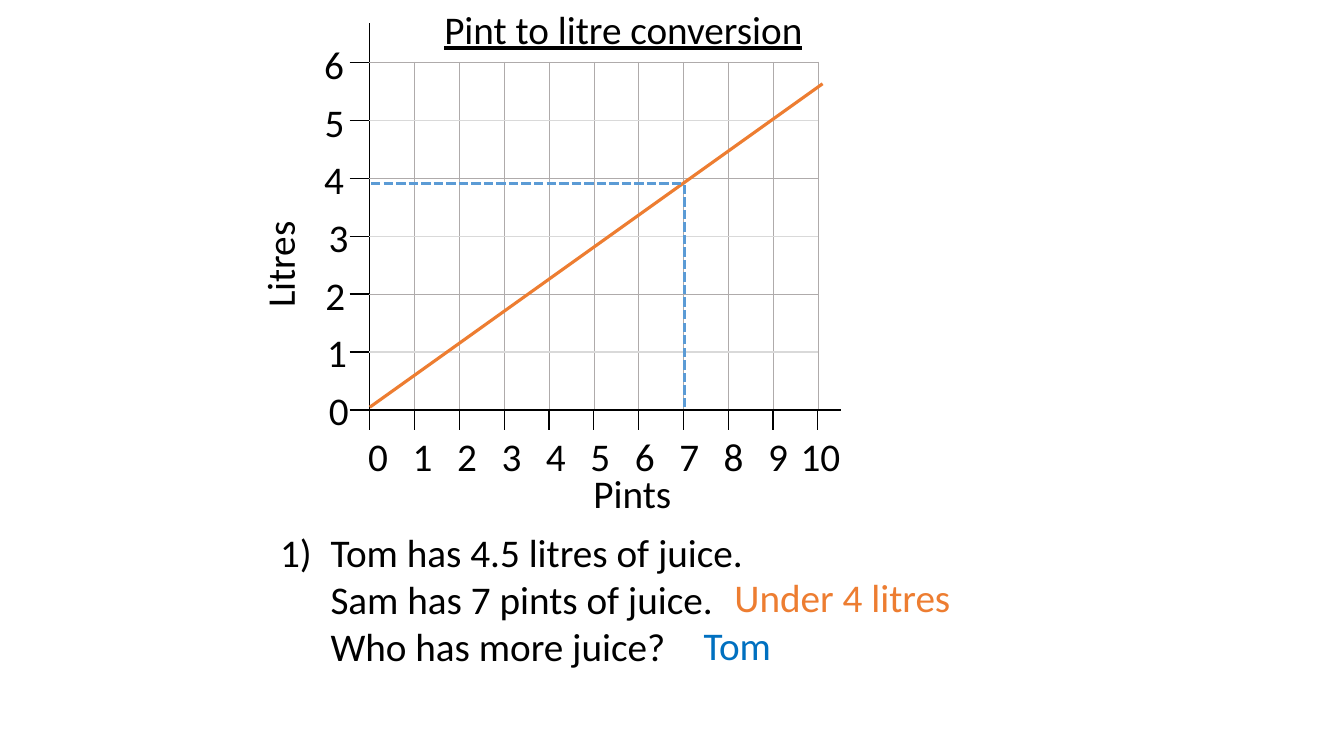
from lxml import etree
from pptx import Presentation
from pptx.dml.color import RGBColor
from pptx.enum.dml import MSO_LINE
from pptx.enum.shapes import MSO_CONNECTOR
from pptx.enum.text import MSO_AUTO_SIZE, PP_ALIGN
from pptx.oxml.ns import qn
from pptx.util import Cm, Pt

BLACK = RGBColor(0x00, 0x00, 0x00)
GREY = RGBColor(0xAF, 0xAB, 0xAB)
PALE_GREY = RGBColor(0xD9, 0xD9, 0xD9)
ORANGE = RGBColor(0xED, 0x7D, 0x31)
LIGHT_BLUE = RGBColor(0x5B, 0x9B, 0xD5)
BLUE = RGBColor(0x00, 0x70, 0xC0)

CENTER = PP_ALIGN.CENTER
LEFT = PP_ALIGN.LEFT
GROW = MSO_AUTO_SIZE.SHAPE_TO_FIT_TEXT
STRAIGHT = MSO_CONNECTOR.STRAIGHT
DASH = MSO_LINE.SQUARE_DOT

AXIS, MINOR, MAJOR = (BLACK, 1), (GREY, 0.5), (PALE_GREY, 1)
NO_GRID_STYLE = "{2D5ABB26-0587-4C30-8999-92F81FD0307C}"
PINTS, LITRES = 10, 6
LABEL_HEIGHT = 1.45
COLUMN_WIDTHS = [0.51] + [1.13] * PINTS + [0.59] * 2
ROW_HEIGHTS = [0.99] + [1.46] * LITRES + [0.51]
LITRE_LABEL_BOXES = [(-0.78, 1.02), (-0.86, 1.09), (-0.86, 0.94), (-0.78, 0.89),
                     (-0.96, 1.14), (-1.55, 2.34), (-1.62, 2.46)]


def add_label(slide, left, top, width, lines, height=LABEL_HEIGHT, color=BLACK,
              align=CENTER, hanging=0, **extra):
    """Write lines of text in a wrapped box and return the box."""
    box = slide.shapes.add_textbox(Cm(left), Cm(top), Cm(width), Cm(height))
    frame = box.text_frame
    frame.word_wrap = True
    frame.auto_size = GROW
    formats = {"name": "Calibri", "size": Pt(28), **extra}
    for index, line in enumerate(lines):
        paragraph = frame.paragraphs[0] if index == 0 else frame.add_paragraph()
        paragraph.alignment = align
        if hanging:
            properties = paragraph._p.get_or_add_pPr()
            properties.set("marL", str(Cm(hanging)))
            properties.set("indent", str(-Cm(hanging)))
        run = paragraph.add_run()
        run.text = line
        for attribute, value in formats.items():
            setattr(run.font, attribute, value)
        run.font.color.rgb = color
    return box


def add_line(slide, start, end, color, dash=None):
    """Draw a straight line between two points."""
    line = slide.shapes.add_connector(STRAIGHT, *map(Cm, (*start, *end)))
    line.line.color.rgb = color
    for attribute, value in {"width": Pt(2.25), "dash_style": dash}.items():
        setattr(line.line, attribute, value)
    etree.SubElement(line._element.spPr, qn("a:effectLst"))


def vertical_border(row, edge):
    """Return the border on a column edge, counted from the left."""
    if edge == 1 or (row == LITRES + 1 and 1 < edge <= PINTS + 1):
        return AXIS
    return MINOR if 1 <= row <= LITRES and 1 < edge <= PINTS + 1 else None


def horizontal_border(edge, column):
    """Return the border on a row edge, counted from the top."""
    if not 1 <= edge <= LITRES + 1:
        return None
    if column == 0 or (edge == LITRES + 1 and column <= PINTS + 1):
        return AXIS
    if column > PINTS:
        return None
    return MINOR if edge % 2 else MAJOR


def set_border(properties, side, border):
    """Add one cell border."""
    line = etree.SubElement(properties, qn(f"a:ln{side}"))
    if border is None:
        etree.SubElement(line, qn("a:noFill"))
        return
    color, width = border
    line.set("w", str(Pt(width)))
    fill = etree.SubElement(line, qn("a:solidFill"))
    etree.SubElement(fill, qn("a:srgbClr"), val=str(color))


def add_grid(slide, left, top):
    """Place the graph paper with its axes and tick marks."""
    size = Cm(sum(COLUMN_WIDTHS)), Cm(sum(ROW_HEIGHTS))
    grid = slide.shapes.add_table(len(ROW_HEIGHTS), len(COLUMN_WIDTHS),
                                  Cm(left), Cm(top), *size).table
    grid._tbl.tblPr.find(qn("a:tableStyleId")).text = NO_GRID_STYLE
    grid.first_row = grid.horz_banding = False
    for column, width in zip(grid.columns, COLUMN_WIDTHS):
        column.width = Cm(width)
    for r, (row, height) in enumerate(zip(grid.rows, ROW_HEIGHTS)):
        row.height = Cm(height)
        for c, cell in enumerate(row.cells):
            for side in ("left", "right", "top", "bottom"):
                setattr(cell, f"margin_{side}", 0)
            properties = cell._tc.get_or_add_tcPr()
            set_border(properties, "L", vertical_border(r, c))
            set_border(properties, "R", vertical_border(r, c + 1))
            set_border(properties, "T", horizontal_border(r, c))
            set_border(properties, "B", horizontal_border(r + 1, c))
            cell.fill.background()
            paragraph = cell.text_frame.paragraphs[0]._p
            etree.SubElement(paragraph, qn("a:endParaRPr"), sz="600")
    last = len(COLUMN_WIDTHS) - 1
    for r in range(1, LITRES, 2):
        grid.cell(r, last).merge(grid.cell(r + 1, last))


def add_graph(slide, left, top):
    """Place the conversion graph with its labels and lines."""
    add_grid(slide, left, top)
    for litres, (offset, width) in enumerate(LITRE_LABEL_BOXES):
        add_label(slide, left + offset, top + 9.02 - LABEL_HEIGHT * litres, width,
                  [str(litres)])
    for pints in range(PINTS):
        add_label(slide, left + 0.22 + 1.12 * pints, top + 10.19, 0.76, [str(pints)])
    add_label(slide, left + 11.08, top + 10.19, 1.57, [str(PINTS)])
    add_label(slide, left + 0.61, top + 11.13, 13.03, ["Pints"])
    add_label(slide, left - 6.96, top + 5.36, 10.39, ["Litres"]).rotation = 270
    add_label(slide, left + 0.51, top - 0.58, 12.78, ["Pint to litre conversion"],
              underline=True)

    reading_x, reading_y, base = left + 8.44, top + 4.04, top + 9.68
    add_line(slide, (left + 11.92, top + 1.53), (left + 0.51, base), ORANGE)
    add_line(slide, (left + 0.54, reading_y), (reading_x, reading_y), LIGHT_BLUE, DASH)
    add_line(slide, (reading_x, base), (reading_x, reading_y), LIGHT_BLUE, DASH)


def add_question(slide, left, top):
    """Place the question and its two answers."""
    question = ["1)\tTom has 4.5 litres of juice.", "\tSam has 7 pints of juice.",
                "\tWho has more juice?"]
    add_label(slide, left, top, 21.51, question, height=3.84, align=LEFT, hanging=1.27)
    add_label(slide, left + 11.45, top + 1.15, 6.35, ["Under 4 litres"],
              color=ORANGE, align=LEFT)
    add_label(slide, left + 10.67, top + 2.34, 6.35, ["Tom"], color=BLUE, align=LEFT)


def main():
    """Build and save the slide."""
    presentation = Presentation()
    presentation.slide_width, presentation.slide_height = Cm(33.87), Cm(19.05)
    slide = presentation.slides.add_slide(presentation.slide_layouts[6])
    add_graph(slide, 8.81, 0.58)
    add_question(slide, 6.81, 13.18)
    presentation.save("out.pptx")


if __name__ == "__main__":
    main()
